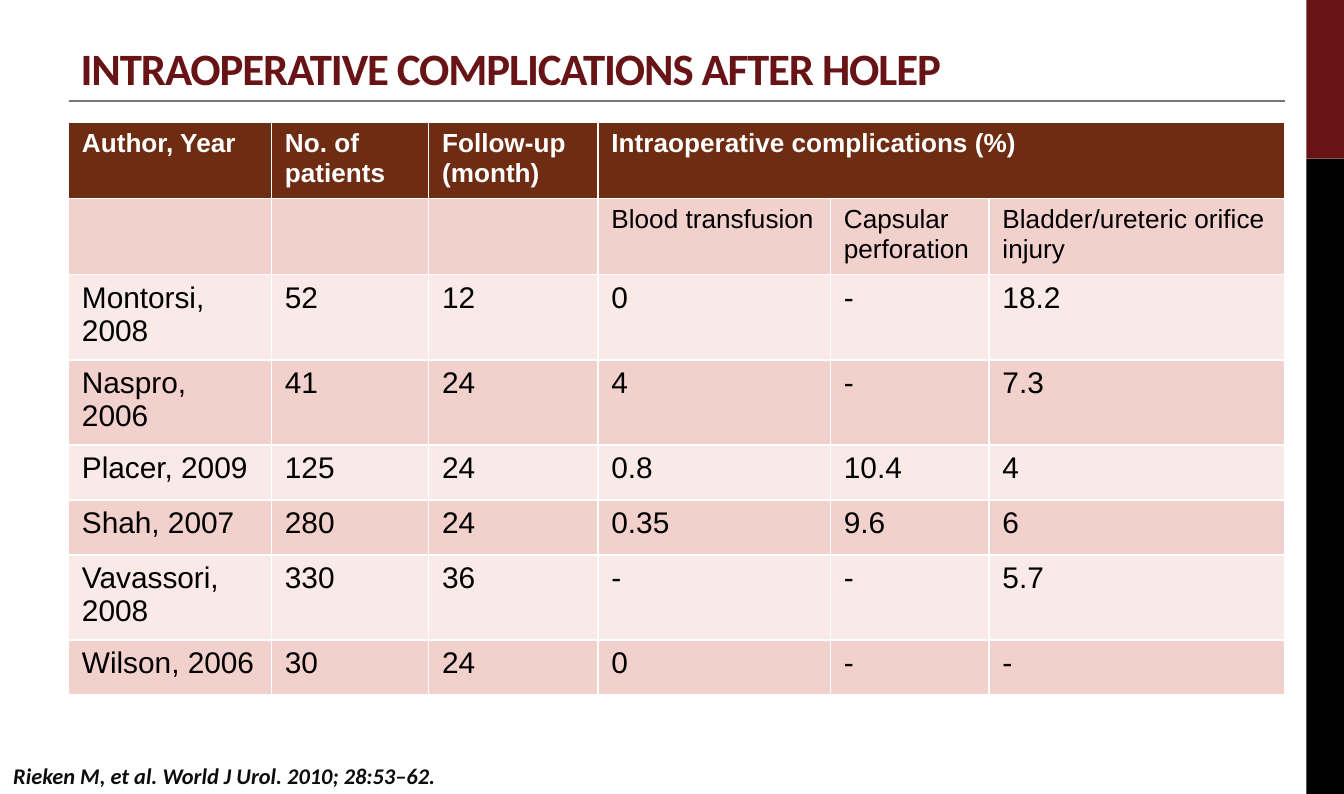
"""Build the slide on intraoperative complications after HoLEP."""
import pptx
import pptx.dml.color
import pptx.enum.shapes
import pptx.enum.text
import pptx.oxml.ns
import pptx.util

INK = {"maroon": "681417", "black": "000000", "white": "FFFFFF", "note": "0D0D0D",
       "rule": "777777", "head": "6E2C12", "dark": "F2D1CD", "light": "F9EAE8"}
TITLE = "INTRAOPERATIVE COMPLICATIONS AFTER HOLEP"
NOTE = "Rieken M, et al. World J Urol. 2010; 28:53–62."
ROWS = [
    ["Author, Year", "No. of\npatients", "Follow-up\n(month)", "Intraoperative complications (%)", "", ""],
    ["", "", "", "Blood transfusion", "Capsular perforation", "Bladder/ureteric orifice injury"],
    ["Montorsi, 2008", "52", "12", "0", "-", "18.2"],
    ["Naspro, 2006", "41", "24", "4", "-", "7.3"],
    ["Placer, 2009", "125", "24", "0.8", "10.4", "4"],
    ["Shah, 2007", "280", "24", "0.35", "9.6", "6"],
    ["Vavassori, 2008", "330", "36", "-", "-", "5.7"],
    ["Wilson, 2006", "30", "24", "0", "-", "-"],
]
COLS = [1.51, 1.17, 1.26, 1.73, 1.18, 2.2]
WIDE, HIGH = 10, 5.91
LEFT, RULE, TOP, ROW = 0.51, 0.75, 0.91, 0.41
SIDE, SPLIT = 9.72, HIGH / 5
FONTS = {
    "title": {"name": "Calibri", "size": 24, "bold": True, "color": "maroon"},
    "note": {"name": "Calibri", "size": 12, "bold": True, "italic": True, "color": "note"},
    "head": {"name": "Arial", "size": 14, "bold": True, "color": "white"},
    "sub": {"name": "Arial", "size": 14, "bold": False, "color": "black"},
    "body": {"name": "Arial", "size": 16, "bold": False, "color": "black"},
}
ANCHOR = pptx.enum.text.MSO_ANCHOR
inch = pptx.util.Inches


def tint(name):
    return pptx.dml.color.RGBColor.from_string(INK[name])


def paint(item, name):
    item.fill.solid()
    item.fill.fore_color.rgb = tint(name)


def write(frame, text, kind):
    frame.text = text
    for par in frame.paragraphs:
        par.alignment = pptx.enum.text.PP_ALIGN.LEFT
        for run in par.runs:
            for key, val in FONTS[kind].items():
                if key == "color":
                    run.font.color.rgb = tint(val)
                else:
                    setattr(run.font, key, pptx.util.Pt(val) if key == "size" else val)


def add_bars(slide):
    for top, tall, name in [(0, SPLIT, "maroon"), (SPLIT, HIGH - SPLIT, "black")]:
        box = [inch(v) for v in (SIDE, top, WIDE - SIDE, tall)]
        bar = slide.shapes.add_shape(pptx.enum.shapes.MSO_SHAPE.RECTANGLE, *box)
        bar.shadow.inherit = False
        bar.line.fill.background()
        paint(bar, name)


def add_title(slide):
    title = slide.shapes.title
    box = {"left": 0.5, "top": 0.13, "width": 9.07, "height": 0.62}
    for key, val in box.items():
        setattr(title, key, inch(val))
    frame = title.text_frame
    frame.auto_size = pptx.enum.text.MSO_AUTO_SIZE.NONE
    frame.vertical_anchor = ANCHOR.BOTTOM
    write(frame, TITLE, "title")
    frame.paragraphs[0].runs[0].font._element.set("spc", "-60")


def add_rule(slide):
    ends = [inch(v) for v in (LEFT, RULE, LEFT + sum(COLS), RULE)]
    rule = slide.shapes.add_connector(pptx.enum.shapes.MSO_CONNECTOR.STRAIGHT, *ends)
    rule.line.color.rgb = tint("rule")
    rule.line.width = pptx.util.Pt(1)
    props = rule._element.spPr
    props.append(props.makeelement(pptx.oxml.ns.qn("a:effectLst"), {}))


def add_note(slide):
    box = [inch(v) for v in (0, HIGH - 0.28, SIDE, 0.28)]
    frame = slide.shapes.add_textbox(*box).text_frame
    frame.word_wrap = True
    frame.vertical_anchor = ANCHOR.MIDDLE
    write(frame, NOTE, "note")


def add_grid(slide):
    box = [inch(v) for v in (LEFT, TOP, sum(COLS), ROW * len(ROWS))]
    grid = slide.shapes.add_table(len(ROWS), len(COLS), *box).table
    for col, wide in zip(grid.columns, COLS):
        col.width = inch(wide)
    for r, row in enumerate(ROWS):
        kind = ("head", "sub")[r] if r < 2 else "body"
        fill = "head" if r == 0 else ("light", "dark")[r % 2]
        for c, text in enumerate(row):
            cell = grid.cell(r, c)
            paint(cell, fill)
            write(cell.text_frame, text, kind)
    grid.cell(0, 3).merge(grid.cell(0, 5))


def main():
    deck = pptx.Presentation()
    deck.slide_width, deck.slide_height = inch(WIDE), inch(HIGH)
    slide = deck.slides.add_slide(deck.slide_layouts[5])
    for step in (add_bars, add_title, add_rule, add_note, add_grid):
        step(slide)
    deck.save("out.pptx")


if __name__ == "__main__":
    main()
